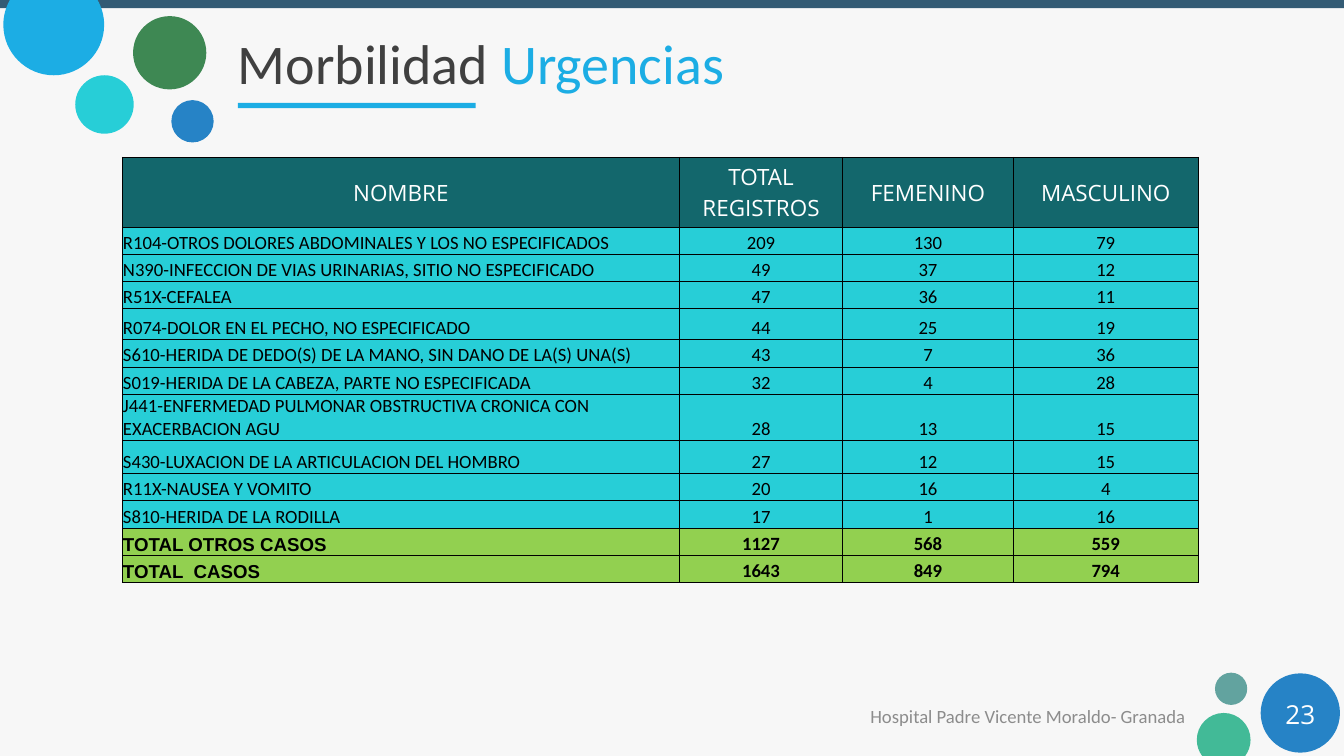
from math import asin, cos, sin, tan

from lxml.etree import SubElement
from pptx import Presentation
from pptx.dml.color import RGBColor
from pptx.enum.shapes import MSO_SHAPE
from pptx.enum.text import MSO_ANCHOR, MSO_AUTO_SIZE, PP_ALIGN
from pptx.oxml.ns import qn
from pptx.util import Inches, Pt

WIDE, HIGH = 20, 11.25
PAPER = RGBColor(0xF7, 0xF7, 0xF7)
SLATE = RGBColor(0x33, 0x5B, 0x74)
SKY = RGBColor(0x1C, 0xAD, 0xE4)
BLUE = RGBColor(0x26, 0x83, 0xC6)
CYAN = RGBColor(0x27, 0xCE, 0xD7)
GREEN = RGBColor(0x3E, 0x88, 0x53)
SAGE = RGBColor(0x62, 0xA3, 0x9F)
MINT = RGBColor(0x42, 0xBA, 0x97)
TEAL = RGBColor(0x13, 0x67, 0x6C)
LIME = RGBColor(0x92, 0xD0, 0x50)
DARK = RGBColor(0x40, 0x40, 0x40)
GREY = RGBColor(0x8C, 0x8C, 0x8C)
WHITE = RGBColor(0xFF, 0xFF, 0xFF)
BLACK = RGBColor(0, 0, 0)

HEADS = ["NOMBRE", "TOTAL REGISTROS", "FEMENINO", "MASCULINO"]
CASES = [
    ("R104-OTROS DOLORES ABDOMINALES Y LOS NO ESPECIFICADOS", 209, 130, 79),
    ("N390-INFECCION DE VIAS URINARIAS, SITIO NO ESPECIFICADO", 49, 37, 12),
    ("R51X-CEFALEA", 47, 36, 11),
    ("R074-DOLOR EN EL PECHO, NO ESPECIFICADO", 44, 25, 19),
    ("S610-HERIDA DE DEDO(S) DE LA MANO, SIN DANO DE LA(S) UNA(S)", 43, 7, 36),
    ("S019-HERIDA DE LA CABEZA, PARTE NO ESPECIFICADA", 32, 4, 28),
    ("J441-ENFERMEDAD PULMONAR OBSTRUCTIVA CRONICA CON EXACERBACION AGU",
     28, 13, 15),
    ("S430-LUXACION DE LA ARTICULACION DEL HOMBRO", 27, 12, 15),
    ("R11X-NAUSEA Y VOMITO", 20, 16, 4),
    ("S810-HERIDA DE LA RODILLA", 17, 1, 16),
]
TOTALS = [
    ("TOTAL OTROS CASOS", 1127, 568, 559),
    ("TOTAL  CASOS", 1643, 849, 794),
]
COLS = [8.29, 2.43, 2.54, 2.75]
ROW = 3.65 / 9  # nine plain rows share this height
ODD_ROWS = {0: 1.04, 4: 0.46, 7: 0.39, 8: 0.49}


class Deck:
    font = "Calibri"
    accent = "Open Sans"

    def __init__(self):
        self.prs = Presentation()
        self.prs.slide_width = Inches(WIDE)
        self.prs.slide_height = Inches(HIGH)
        self.slide = self.prs.slides.add_slide(self.prs.slide_layouts[5])
        fill = self.slide.background.fill
        fill.solid()
        fill.fore_color.rgb = PAPER

    def paint(self, shape, color):
        shape.shadow.inherit = False
        shape.fill.solid()
        shape.fill.fore_color.rgb = color
        shape.line.fill.background()

    def shape(self, kind, x, y, w, h, color):
        item = self.slide.shapes.add_shape(
            kind, Inches(x), Inches(y), Inches(w), Inches(h))
        self.paint(item, color)

    def bar(self, x, y, w, h, color):
        self.shape(MSO_SHAPE.RECTANGLE, x, y, w, h, color)

    def dot(self, x, y, size, color):
        self.shape(MSO_SHAPE.OVAL, x, y, size, size, color)

    def cut_dot(self, x, y, rad, edge, color):
        """Circle around (x, y), cut off by the level line at height edge."""
        gap = abs(y - edge)
        way = 1 if edge < y else -1
        turn = asin(gap / rad)
        arm = 4 / 3 * tan(turn / 4) * rad
        bend = 0.55 * rad
        half = [(rad * cos(turn), -gap),
                (rad * cos(turn) + arm * sin(turn), arm * cos(turn) - gap),
                (rad, -arm), (rad, 0), (rad, bend), (bend, rad)]
        ring = half + [(0, rad)] + [(-a, b) for a, b in reversed(half)]
        points = [(Inches(x + a), Inches(y + way * b)) for a, b in ring]
        pen = self.slide.shapes.build_freeform(*points[0])
        pen.add_line_segments(points[1:], close=True)
        item = pen.convert_to_shape()
        self.round(item)
        self.paint(item, color)

    def round(self, item):
        """Turn each three line segments into one Bezier curve."""
        lines = list(item._element.iter(qn("a:lnTo")))
        for first, *rest in zip(lines[::3], lines[1::3], lines[2::3]):
            first.tag = qn("a:cubicBezTo")
            for line in rest:
                first.append(line[0])
                line.getparent().remove(line)

    def run(self, para, text, size, color, font=None, bold=False):
        run = para.add_run()
        run.text = text
        run.font.name = font or self.font
        run.font.size = Pt(size)
        run.font.bold = bold
        run.font.color.rgb = color

    def frame(self, box, align):
        """Set up the box's text frame and return its first paragraph."""
        frame = box.text_frame
        frame.word_wrap = True
        frame.auto_size = MSO_AUTO_SIZE.NONE
        frame.vertical_anchor = MSO_ANCHOR.MIDDLE
        frame.margin_left = frame.margin_right = Inches(0.18)
        frame.margin_top = frame.margin_bottom = Inches(0.09)
        para = frame.paragraphs[0]
        para.alignment = align
        return para

    def title(self, x, y, w, h, parts):
        box = self.slide.shapes.title
        box.left, box.top = Inches(x), Inches(y)
        box.width, box.height = Inches(w), Inches(h)
        para = self.frame(box, PP_ALIGN.LEFT)
        for text, color in parts:
            self.run(para, text, 60, color)

    def text(self, x, y, w, h, text, size, color, align, font=None):
        box = self.slide.shapes.add_textbox(
            Inches(x), Inches(y), Inches(w), Inches(h))
        self.run(self.frame(box, align), text, size, color, font)

    def edge(self, cell):
        """Draw a thin black border on all four sides."""
        props = cell._tc.get_or_add_tcPr()
        for side in ("a:lnL", "a:lnR", "a:lnT", "a:lnB"):
            line = SubElement(props, qn(side), w=str(Pt(1)))
            fill = SubElement(line, qn("a:solidFill"))
            SubElement(fill, qn("a:srgbClr"), val=str(BLACK))

    def cell(self, cell, text, align, anchor, fill, **style):
        self.edge(cell)
        cell.fill.solid()
        cell.fill.fore_color.rgb = fill
        cell.vertical_anchor = anchor
        cell.margin_left = cell.margin_right = cell.margin_top = Inches(0.01)
        cell.margin_bottom = 0
        para = cell.text_frame.paragraphs[0]
        para.alignment = align
        self.run(para, text, **style)

    def table(self, x, y):
        rows = [HEADS, *CASES, *TOTALS]
        highs = [ODD_ROWS.get(i, ROW) for i in range(len(rows))]
        table = self.slide.shapes.add_table(
            len(rows), len(COLS), Inches(x), Inches(y),
            Inches(sum(COLS)), Inches(sum(highs))).table
        for col, wide in zip(table.columns, COLS):
            col.width = Inches(wide)
        for i, (row, high) in enumerate(zip(rows, highs)):
            table.rows[i].height = Inches(high)
            head, total = i == 0, i > len(CASES)
            for j, value in enumerate(row):
                name = j == 0 and not head
                font = self.accent if head else None
                if name and total:
                    font = "Arial"
                self.cell(
                    table.cell(i, j), str(value),
                    PP_ALIGN.LEFT if name else PP_ALIGN.CENTER,
                    MSO_ANCHOR.MIDDLE if head else MSO_ANCHOR.BOTTOM,
                    TEAL if head else LIME if total else CYAN,
                    size=24 if head else 20, font=font, bold=total,
                    color=WHITE if head else BLACK)


def main():
    deck = Deck()
    deck.bar(0, 0, WIDE, 0.12, SLATE)
    deck.dot(2.55, 1.49, 0.63, BLUE)
    deck.cut_dot(0.8, 0.37, 0.75, 0, SKY)
    deck.dot(1.12, 1.12, 0.87, CYAN)
    deck.dot(1.98, 0.24, 1.09, GREEN)
    deck.dot(18.08, 10.01, 0.48, SAGE)
    deck.dot(18.76, 10.02, 1.18, BLUE)
    deck.cut_dot(18.21, 11.01, 0.4, HIGH, MINT)
    deck.bar(3.54, 1.53, 3.54, 0.08, SKY)
    deck.title(3.36, 0.27, 15.69, 1.32,
               [("Morbilidad ", DARK), ("Urgencias", SKY)])
    deck.text(11.49, 10.35, 6.33, 0.6,
              "Hospital Padre Vicente Moraldo- Granada", 20, GREY,
              PP_ALIGN.RIGHT)
    deck.text(18.76, 10.32, 1.18, 0.6, "23", 28, WHITE, PP_ALIGN.CENTER,
              deck.accent)
    deck.table(1.82, 2.34)
    deck.prs.save("out.pptx")


if __name__ == "__main__":
    main()
